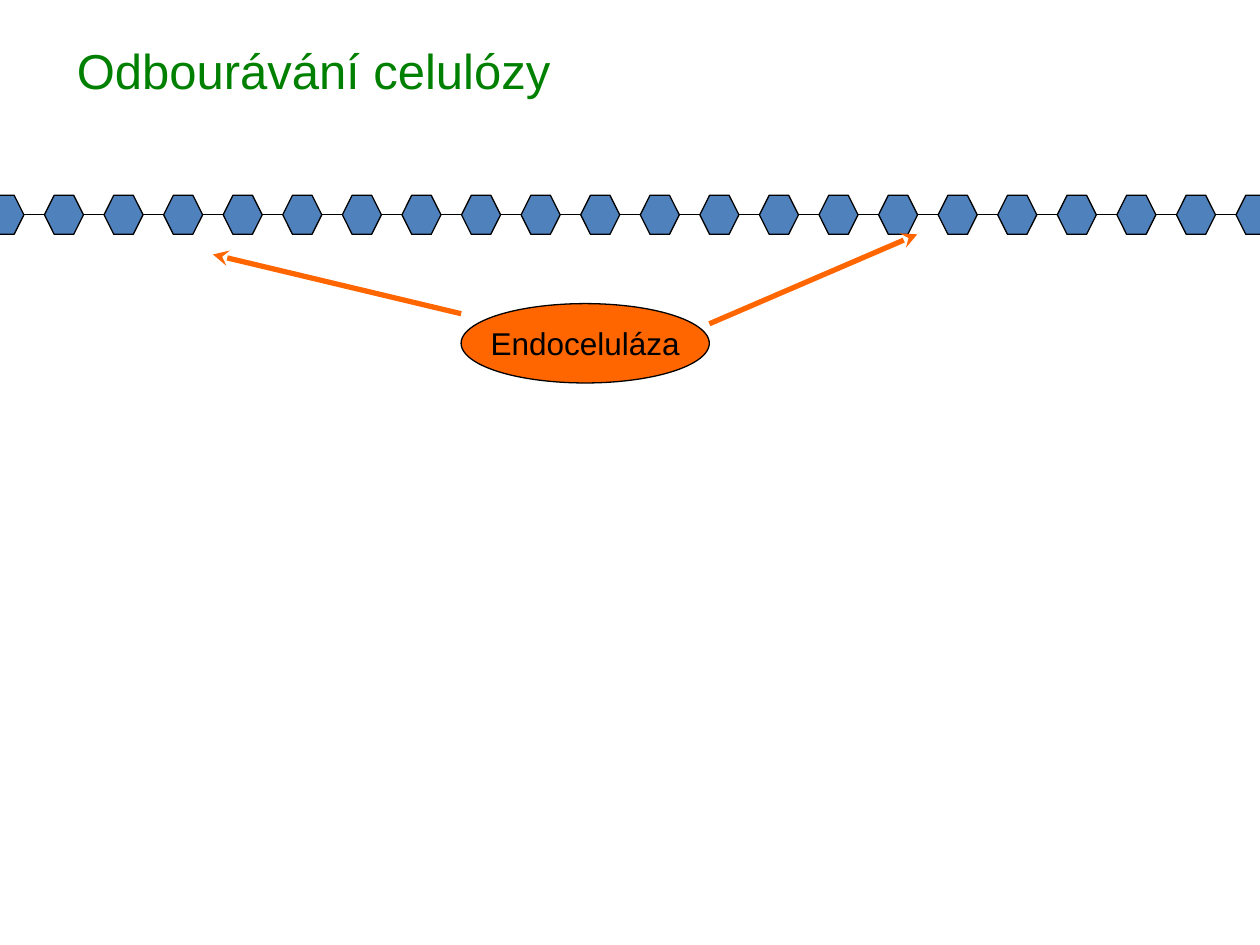
from dataclasses import dataclass

from lxml import etree
from pptx import Presentation
from pptx import util as u
from pptx.dml.color import RGBColor
from pptx.enum import shapes, text
from pptx.oxml import ns


@dataclass(frozen=True)
class Theme:
    font: str = "Arial"
    title_color: RGBColor = RGBColor(0x00, 0x80, 0x00)
    glucose: RGBColor = RGBColor(0x4F, 0x81, 0xBD)
    enzyme: RGBColor = RGBColor(0xFF, 0x66, 0x00)
    ink: RGBColor = RGBColor(0x00, 0x00, 0x00)
    title_size: u.Pt = u.Pt(28)
    label_size: u.Pt = u.Pt(18)
    thin: u.Pt = u.Pt(0.75)
    thick: u.Pt = u.Pt(3)


THEME = Theme()


def add_run(paragraph, wording, size, color):
    run = paragraph.add_run()
    run.text = wording
    run.font.name = THEME.font
    run.font.size = size
    run.font.color.rgb = color


def add_outlined(parent, kind, box, fill):
    outlined = parent.add_shape(kind, *(u.Inches(v) for v in box))
    outlined.shadow.inherit = False
    outlined.fill.solid()
    outlined.fill.fore_color.rgb = fill
    outlined.line.color.rgb = THEME.ink
    outlined.line.width = THEME.thin
    return outlined


def add_line(parent, start, end, color, width):
    line = parent.add_connector(
        shapes.MSO_CONNECTOR.STRAIGHT, *(u.Inches(v) for v in (*start, *end)))
    line.line.color.rgb = color
    line.line.width = width
    etree.SubElement(line._element.spPr, ns.qn("a:effectLst"))
    return line


def add_title(slide, box):
    title = slide.shapes.title
    title.left, title.top, title.width, title.height = (u.Inches(v) for v in box)
    frame = title.text_frame
    frame.vertical_anchor = text.MSO_ANCHOR.MIDDLE
    heading = frame.paragraphs[0]
    heading.alignment = text.PP_ALIGN.LEFT
    add_run(heading, "Odbourávání celulózy", THEME.title_size, THEME.title_color)


def add_cellulose(slide, box, units):
    """Evenly spaced hexagons, as wide as the box is high, joined by bonds."""
    left, top, width, size = box
    pitch = (width - size) / (units - 1)
    middle = top + size / 2
    chain = slide.shapes.add_group_shape().shapes
    for index in range(units):
        x = left + index * pitch
        glucose = add_outlined(chain, shapes.MSO_SHAPE.HEXAGON,
                               (x, top, size, size), THEME.glucose)
        glucose.adjustments[0] = 0.25
        if index < units - 1:
            add_line(chain, (x + size, middle), (x + pitch, middle),
                     THEME.ink, THEME.thin)


def add_enzyme(slide, box):
    enzyme = add_outlined(slide.shapes, shapes.MSO_SHAPE.OVAL, box, THEME.enzyme)
    frame = enzyme.text_frame
    frame.word_wrap = False
    frame.vertical_anchor = text.MSO_ANCHOR.MIDDLE
    label = frame.paragraphs[0]
    label.alignment = text.PP_ALIGN.CENTER
    add_run(label, "Endoceluláza", THEME.label_size, THEME.ink)


def add_cuts(slide, box, cut_sites):
    """Arrows from both sides of the enzyme box to the cut sites."""
    left, top, width, _ = box
    starts = ((left, top + 0.08), (left + width, top + 0.16))
    cuts = slide.shapes.add_group_shape().shapes
    for start, site in zip(starts, cut_sites):
        arrow = add_line(cuts, start, site, THEME.enzyme, THEME.thick)
        etree.SubElement(arrow.line._get_or_add_ln(), ns.qn("a:tailEnd"),
                         type="stealth")


def main():
    deck = Presentation()
    deck.slide_width, deck.slide_height = u.Inches(10), u.Inches(7.5)
    slide = deck.slides.add_slide(deck.slide_layouts[5])

    add_title(slide, (0.51, 0.13, 9, 0.85))
    # The chain runs past both slide edges
    add_cellulose(slide, (-0.12, 1.55, 10.24, 0.31), units=22)
    # Enzyme and the places where it cuts
    enzyme_box = (3.66, 2.41, 1.97, 0.63)
    add_enzyme(slide, enzyme_box)
    add_cuts(slide, enzyme_box, ((1.69, 2.02), (7.28, 1.86)))

    deck.save("out.pptx")


if __name__ == "__main__":
    main()
